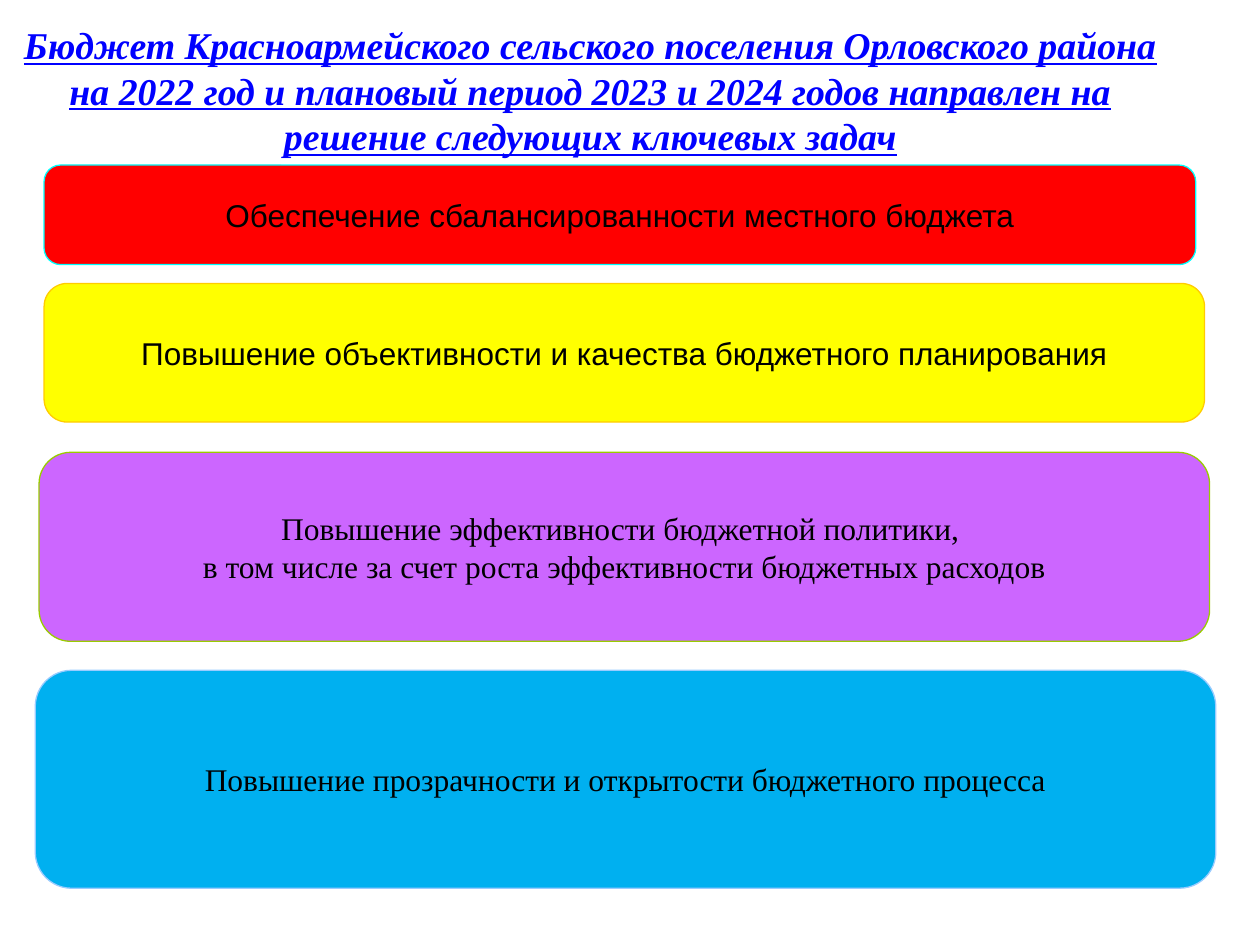
from pptx import Presentation
from pptx.dml.color import RGBColor
from pptx.enum.shapes import MSO_SHAPE
from pptx.enum.text import MSO_ANCHOR, PP_ALIGN
from pptx.util import Inches, Pt

COLORS = {
    "title": "0000FF", "text": "000000",
    "red": "FF0000", "cyan": "00FFFF",
    "yellow": "FFFF00", "gold": "FFCC00",
    "violet": "CC66FF", "green": "99CC00",
    "blue": "00B0F0", "pale_blue": "99CCFF",
}

TITLE = ("Бюджет Красноармейского сельского поселения Орловского района "
         "на 2022 год и плановый период 2023 и 2024 годов направлен на "
         "решение следующих ключевых задач")

TASKS = [
    (["Обеспечение сбалансированности местного бюджета"],
     (0.35, 1.31, 9.14, 0.79), "red", "cyan", "Arial"),
    (["Повышение объективности и качества бюджетного планирования"],
     (0.35, 2.25, 9.21, 1.1), "yellow", "gold", "Arial"),
    (["Повышение эффективности бюджетной политики, ",
      "в том числе за счет роста эффективности бюджетных расходов"],
     (0.31, 3.59, 9.29, 1.5), "violet", "green", "Times New Roman"),
    (["Повышение прозрачности и открытости бюджетного процесса"],
     (0.28, 5.32, 9.37, 1.73), "blue", "pale_blue", "Times New Roman"),
]


def color(name):
    """Return the named palette color."""
    return RGBColor.from_string(COLORS[name])


def write_text(shape, lines, *, font="Times New Roman", size=18,
               color_name="text", emphasis=False, wrap=False):
    """Fill a shape with centered paragraphs in one format."""
    frame = shape.text_frame
    frame.word_wrap = wrap
    frame.vertical_anchor = MSO_ANCHOR.MIDDLE
    for index, line in enumerate(lines):
        paragraph = frame.add_paragraph() if index else frame.paragraphs[0]
        paragraph.alignment = PP_ALIGN.CENTER
        run = paragraph.add_run()
        run.text = line
        run.font.name = font
        run.font.size = Pt(size)
        run.font.color.rgb = color(color_name)
        run.font.bold = run.font.italic = run.font.underline = emphasis


def add_title(slide, text):
    """Add the underlined slide title."""
    box = slide.shapes.add_textbox(Inches(0), Inches(0.28), Inches(9.37), Inches(0.87))
    write_text(box, [text], size=21.6, color_name="title", emphasis=True, wrap=True)


def add_task(slide, lines, bounds, fill, outline, font):
    """Add one rounded bar that names a budget task."""
    shape = slide.shapes.add_shape(
        MSO_SHAPE.ROUNDED_RECTANGLE, *(Inches(value) for value in bounds))
    shape.shadow.inherit = False
    shape.fill.solid()
    shape.fill.fore_color.rgb = color(fill)
    shape.line.color.rgb = color(outline)
    shape.line.width = Pt(0.75)
    write_text(shape, lines, font=font)


def main():
    """Build and save the budget tasks slide."""
    presentation = Presentation()
    presentation.slide_width = Inches(10)
    presentation.slide_height = Inches(7.5)
    slide = presentation.slides.add_slide(presentation.slide_layouts[6])
    add_title(slide, TITLE)
    for task in TASKS:
        add_task(slide, *task)
    presentation.save("out.pptx")


if __name__ == "__main__":
    main()
